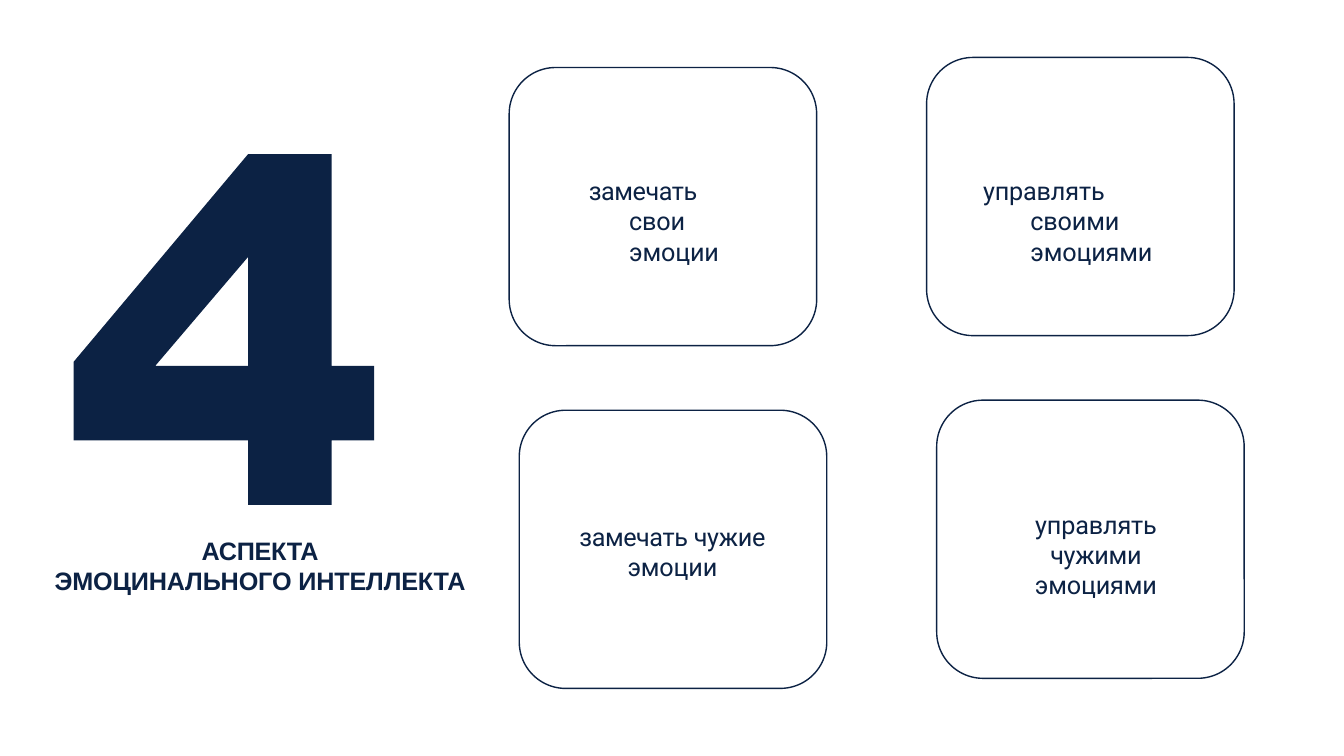
from pptx import Presentation
from pptx.dml.color import RGBColor
from pptx.enum.shapes import MSO_SHAPE
from pptx.enum.text import MSO_ANCHOR, MSO_AUTO_SIZE, PP_ALIGN
from pptx.util import Inches, Pt

NAVY = RGBColor(0x0C, 0x22, 0x44)

FOUR_CONTOURS = [
    [(256, 284), (173, 284), (173, 348), (256, 348)],
    [(256, 0), (173, 0), (0, 206), (0, 284), (298, 284), (298, 210),
     (81, 210), (173, 102), (256, 102)],
    [(256, 102), (173, 102), (173, 210), (256, 210)],
]

CAPTION = [[("АСПЕКТА", -20)], [("ЭМОЦИНАЛЬНОГО ИНТЕЛЛЕКТА", -10)]]

NOTICE_OWN = [[("замечать ", -30), ("свои эмоции", -10)]]
MANAGE_OWN = [[("управлять своими эмоциями", -10)]]
NOTICE_OTHERS = [[("замечать ", -30), ("чужие", -20)], [("эмоции", -10)]]
MANAGE_OTHERS = [[("управлять ", -10), ("чужими", -20)], [("эмоциями", -10)]]


def write_text(holder, paragraphs, font="Roboto", size=18, bold=False,
               align=PP_ALIGN.CENTER, margin=0, first_line=0, next_space=0.1):
    frame = holder.text_frame
    frame.word_wrap = True
    frame.auto_size = MSO_AUTO_SIZE.SHAPE_TO_FIT_TEXT
    frame.vertical_anchor = MSO_ANCHOR.TOP
    frame.margin_left = frame.margin_right = frame.margin_bottom = 0
    frame.margin_top = Inches(0.01)
    for index, pieces in enumerate(paragraphs):
        paragraph = frame.add_paragraph() if index else frame.paragraphs[0]
        paragraph.alignment = align
        paragraph.space_before = Pt(next_space if index else 1)
        properties = paragraph._p.get_or_add_pPr()
        properties.set("marL", str(Inches(margin)))
        properties.set("indent", str(Inches(first_line)))
        for words, tracking in pieces:
            run = paragraph.add_run()
            run.text = words
            run.font.name = font
            run.font.size = Pt(size)
            run.font.bold = bold
            run.font.color.rgb = NAVY
            run._r.get_or_add_rPr().set("spc", str(tracking))


def place(holder, left, top, width, height):
    holder.left, holder.top = Inches(left), Inches(top)
    holder.width, holder.height = Inches(width), Inches(height)


def add_number_block(slide, left, top):
    first, *others = FOUR_CONTOURS
    builder = slide.shapes.build_freeform(*first[0], scale=Inches(0.01))
    builder.add_line_segments(first[1:], close=True)
    for contour in others:
        builder.move_to(*contour[0])
        builder.add_line_segments(contour[1:], close=True)
    four = builder.convert_to_shape(Inches(left), Inches(top))
    four.shadow.inherit = False
    four.fill.solid()
    four.fill.fore_color.rgb = NAVY
    four.line.fill.background()

    caption = slide.shapes.add_textbox(
        Inches(left - 0.22), Inches(top + 3.77), Inches(4.14), Inches(0.63))
    write_text(caption, CAPTION, font="Arial", bold=True)


def add_aspect_card(slide, left, top, inset, drop, width, paragraphs,
                    holder=None, **text_format):
    card = slide.shapes.add_shape(
        MSO_SHAPE.ROUNDED_RECTANGLE,
        Inches(left), Inches(top), Inches(3.05), Inches(2.76))
    card.shadow.inherit = False
    card.fill.background()
    card.line.color.rgb = NAVY
    card.line.width = Pt(1)

    aspect = holder or slide.shapes.add_textbox(0, 0, 0, 0)
    place(aspect, left + inset, top + drop, width, 0.63)
    write_text(aspect, paragraphs, **text_format)


def add_aspects(slide, left, top):
    hanging = {"align": PP_ALIGN.LEFT, "margin": 0.42, "first_line": -0.4}
    title_format = {"align": PP_ALIGN.LEFT, "margin": 0.48,
                    "first_line": -0.47, "holder": slide.shapes.title}
    aspects = [
        (0.77, 1.06, 1.7, NOTICE_OWN, hanging),
        (0.55, 1.16, 2.14, MANAGE_OWN, title_format),
        (0.59, 1.09, 1.86, NOTICE_OTHERS, {}),
        (0.5, 1.07, 2.16, MANAGE_OTHERS, {"next_space": 0}),
    ]
    for index, (inset, drop, width, paragraphs, options) in enumerate(aspects):
        row, column = divmod(index, 2)
        add_aspect_card(
            slide, left + 4.14 * column + 0.1 * row,
            top + 3.4 * row - 0.1 * column,
            inset, drop, width, paragraphs, **options)


def main():
    presentation = Presentation()
    presentation.slide_width = Inches(13.33)
    presentation.slide_height = Inches(7.5)
    slide = presentation.slides.add_slide(presentation.slide_layouts[5])
    add_number_block(slide, 0.73, 1.53)
    add_aspects(slide, 5.05, 0.67)
    presentation.save("out.pptx")


if __name__ == "__main__":
    main()
